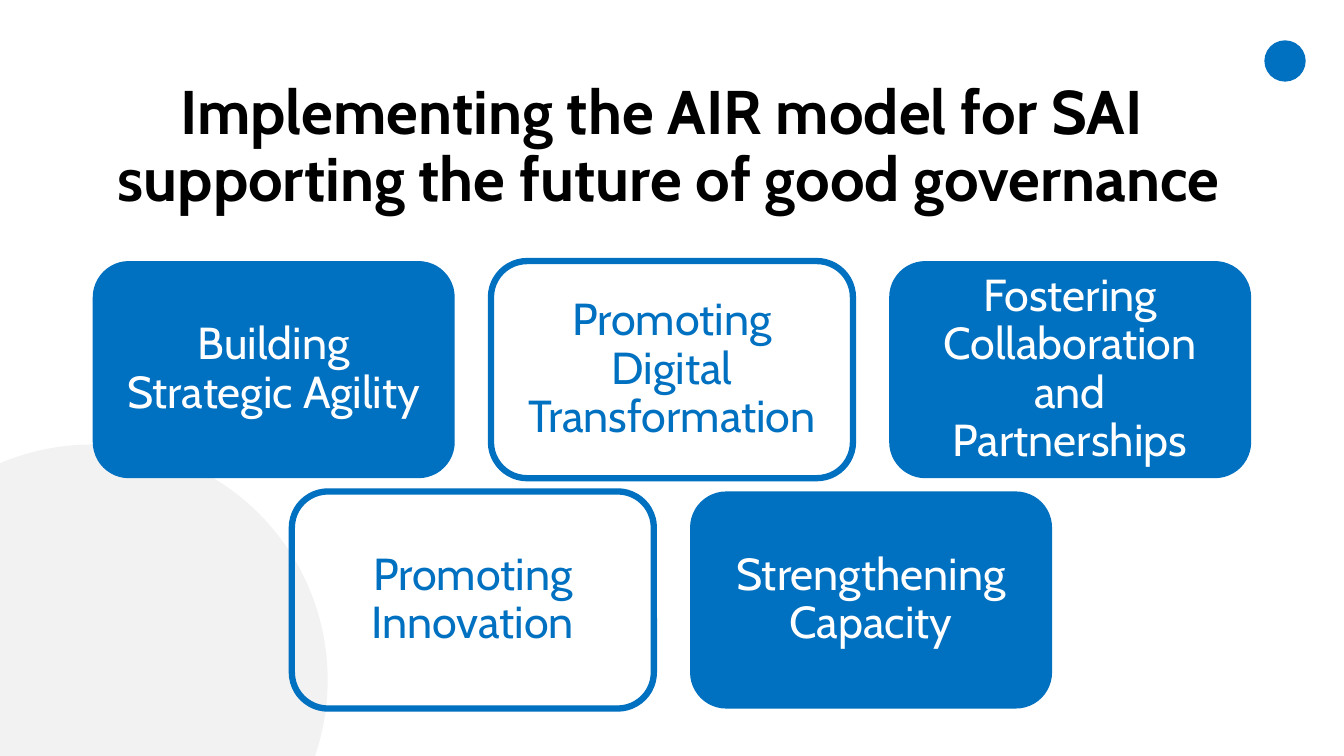
import pptx
import pptx.util
import pptx.dml.color
import pptx.enum.shapes
import pptx.enum.text

Inches = pptx.util.Inches
Color = pptx.dml.color.RGBColor
Shape = pptx.enum.shapes.MSO_SHAPE
BLUE = Color(0x00, 0x70, 0xC0)
GREY = Color(0xF2, 0xF2, 0xF2)
WHITE = Color(0xFF, 0xFF, 0xFF)
BLACK = Color(0x00, 0x00, 0x00)

WIDE, HIGH = 13.33, 7.5
TITLE = "Implementing the AIR model for SAI \vsupporting the future of good governance"
ROWS = [
    ["Building Strategic Agility", "Promoting Digital Transformation",
     "Fostering Collaboration and Partnerships"],
    ["Promoting Innovation", "Strengthening Capacity"],
]


def apply(item, values):
    for name, value in values.items():
        setattr(item, name, value)


def write(frame, text, size, color, bold, inset):
    frame.text = text
    apply(frame, {
        "word_wrap": True,
        "auto_size": pptx.enum.text.MSO_AUTO_SIZE.NONE,
        "vertical_anchor": pptx.enum.text.MSO_ANCHOR.MIDDLE,
        "margin_left": Inches(inset), "margin_right": Inches(inset),
        "margin_top": Inches(inset), "margin_bottom": Inches(inset),
    })
    line = frame.paragraphs[0]
    apply(line, {"alignment": pptx.enum.text.PP_ALIGN.CENTER, "line_spacing": 0.9})
    for run in line.runs:
        apply(run.font, {"name": "Cabin", "size": pptx.util.Pt(size), "bold": bold})
        run.font.color.rgb = color


def add_form(slide, kind, box, fill):
    form = slide.shapes.add_shape(kind, *map(Inches, box))
    form.shadow.inherit = False
    if fill is None:
        form.fill.background()
        form.line.color.rgb = BLUE
        form.line.width = pptx.util.Pt(4.5)
    else:
        form.fill.solid()
        form.fill.fore_color.rgb = fill
        form.line.fill.background()
    return form


def add_title(slide, box):
    title = slide.shapes.title
    apply(title, dict(zip(("left", "top", "width", "height"), map(Inches, box))))
    write(title.text_frame, TITLE, 44, BLACK, True, 0.05)


def add_cards(slide, box):
    left, top, width, height = box
    cols = max(map(len, ROWS))
    gap = 0.1
    wide = width / (cols + gap * (cols - 1))
    step = wide * (1 + gap)
    tall = wide * 0.6
    drop = height - tall
    count = 0
    for row, names in enumerate(ROWS):
        start = left + (cols - len(names)) * step / 2
        for col, name in enumerate(names):
            solid = count % 2 == 0
            if row:
                solid = col % 2 == 1
            spot = (start + col * step, top + row * drop, wide, tall)
            card = add_form(slide, Shape.ROUNDED_RECTANGLE, spot, BLUE if solid else None)
            write(card.text_frame, name, 32, WHITE if solid else BLUE, False, 0.13)
            count += 1


def main():
    deck = pptx.Presentation()
    deck.slide_width, deck.slide_height = Inches(WIDE), Inches(HIGH)
    slide = deck.slides.add_slide(deck.slide_layouts[5])
    add_form(slide, Shape.OVAL, (-1.42, 4.41, 4.67, 4.67), GREY)
    add_title(slide, (0.92, 0.51, 11.43, 1.92))
    add_cards(slide, (0.92, 2.59, 11.49, 4.44))
    add_form(slide, Shape.OVAL, (12.54, 0.4, 0.41, 0.41), BLUE)
    deck.save("out.pptx")


if __name__ == "__main__":
    main()
